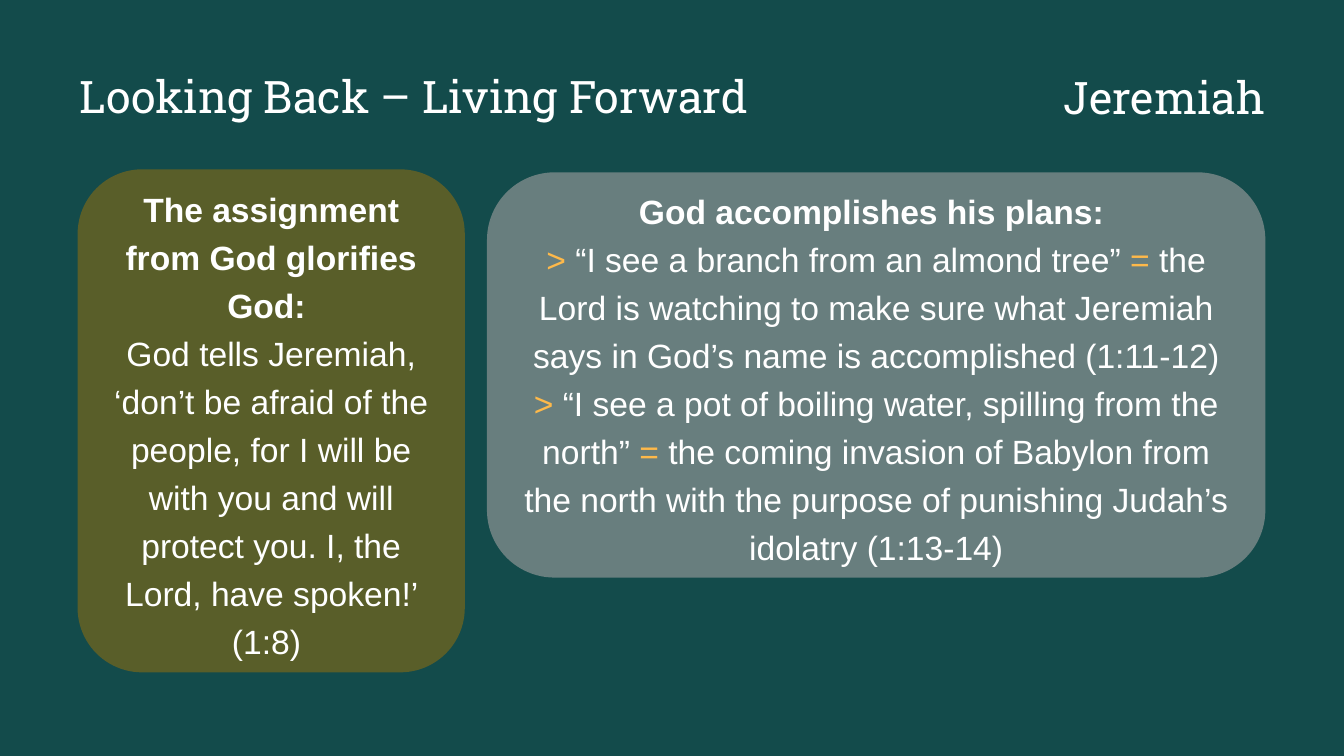
from pptx import Presentation
from pptx.dml.color import RGBColor
from pptx.enum.shapes import MSO_SHAPE
from pptx.enum.text import MSO_ANCHOR, PP_ALIGN
from pptx.util import Inches, Pt

ROUNDED = MSO_SHAPE.ROUNDED_RECTANGLE
TOP, MIDDLE = MSO_ANCHOR.TOP, MSO_ANCHOR.MIDDLE
LEFT, CENTER, RIGHT = PP_ALIGN.LEFT, PP_ALIGN.CENTER, PP_ALIGN.RIGHT

TEAL = RGBColor(0x13, 0x4B, 0x4B)
OLIVE = RGBColor(0x59, 0x5E, 0x29)
GREY = RGBColor(0x68, 0x7E, 0x7E)
WHITE = RGBColor(0xFF, 0xFF, 0xFF)
AMBER = RGBColor(0xFE, 0xB9, 0x4A)

TITLE = ("Looking Back – Living Forward", (0.79, 0.68, 6.68, 0.68), LEFT)
BOOK = ("Jeremiah", (10.5, 0.69, 2.05, 0.68), RIGHT)
HEADING = {"name": "Roboto Slab", "size": Pt(32), "bold": False}
BODY = {"name": "Arial", "size": Pt(24)}
LINE_SPACING = 1.19

CARDS = [
    ((0.77, 1.68, 3.84, 4.99), OLIVE, "The assignment from God glorifies God: ", [
        ["God tells Jeremiah, ‘don’t be afraid of the people, for I will be "
         "with you and will protect you. I, the Lord, have spoken!’ (1:8) "],
    ]),
    ((4.83, 1.71, 7.72, 4.02), GREY, "God accomplishes his plans: ", [
        [">", " “I see a branch from an almond tree” ", "=",
         " the Lord is watching to make sure what Jeremiah says in God’s name "
         "is accomplished (1:11-12)"],
        [">", " “I see a pot of boiling water, spilling from the north” ", "=",
         " the coming invasion of Babylon from the north with the purpose of "
         "punishing Judah’s idolatry (1:13-14)"],
    ]),
]


def add_run(p, text, font, color=WHITE):
    r = p.add_run()
    r.text = text
    for name, value in font.items():
        setattr(r.font, name, value)
    r.font.color.rgb = color


def fill_heading(sp, text, box, align):
    sp.left, sp.top, sp.width, sp.height = map(Inches, box)
    tf = sp.text_frame
    frame = {"word_wrap": True, "vertical_anchor": TOP, "margin_left": 0,
             "margin_right": 0, "margin_top": 0, "margin_bottom": 0}
    for name, value in frame.items():
        setattr(tf, name, value)
    p = tf.paragraphs[0]
    p.alignment = align
    p.line_spacing = 1.0
    add_run(p, text, HEADING)


def add_card(slide, box, color, heading, lines):
    sp = slide.shapes.add_shape(ROUNDED, *map(Inches, box))
    sp.shadow.inherit = False
    sp.fill.solid()
    sp.fill.fore_color.rgb = color
    sp.line.fill.background()
    tf = sp.text_frame
    tf.word_wrap = True
    tf.vertical_anchor = MIDDLE
    for i, parts in enumerate([[heading]] + lines):
        p = tf.paragraphs[0] if i == 0 else tf.add_paragraph()
        p.alignment = CENTER
        p.line_spacing = LINE_SPACING
        for text in parts:
            add_run(p, text, {**BODY, "bold": i == 0},
                    AMBER if text in (">", "=") else WHITE)


def main():
    prs = Presentation()
    prs.slide_width, prs.slide_height = Inches(13.33), Inches(7.5)
    slide = prs.slides.add_slide(prs.slide_layouts[5])
    slide.background.fill.solid()
    slide.background.fill.fore_color.rgb = TEAL
    fill_heading(slide.shapes.title, *TITLE)
    fill_heading(slide.shapes.add_textbox(0, 0, 0, 0), *BOOK)
    for card in CARDS:
        add_card(slide, *card)
    prs.save("out.pptx")


if __name__ == "__main__":
    main()
